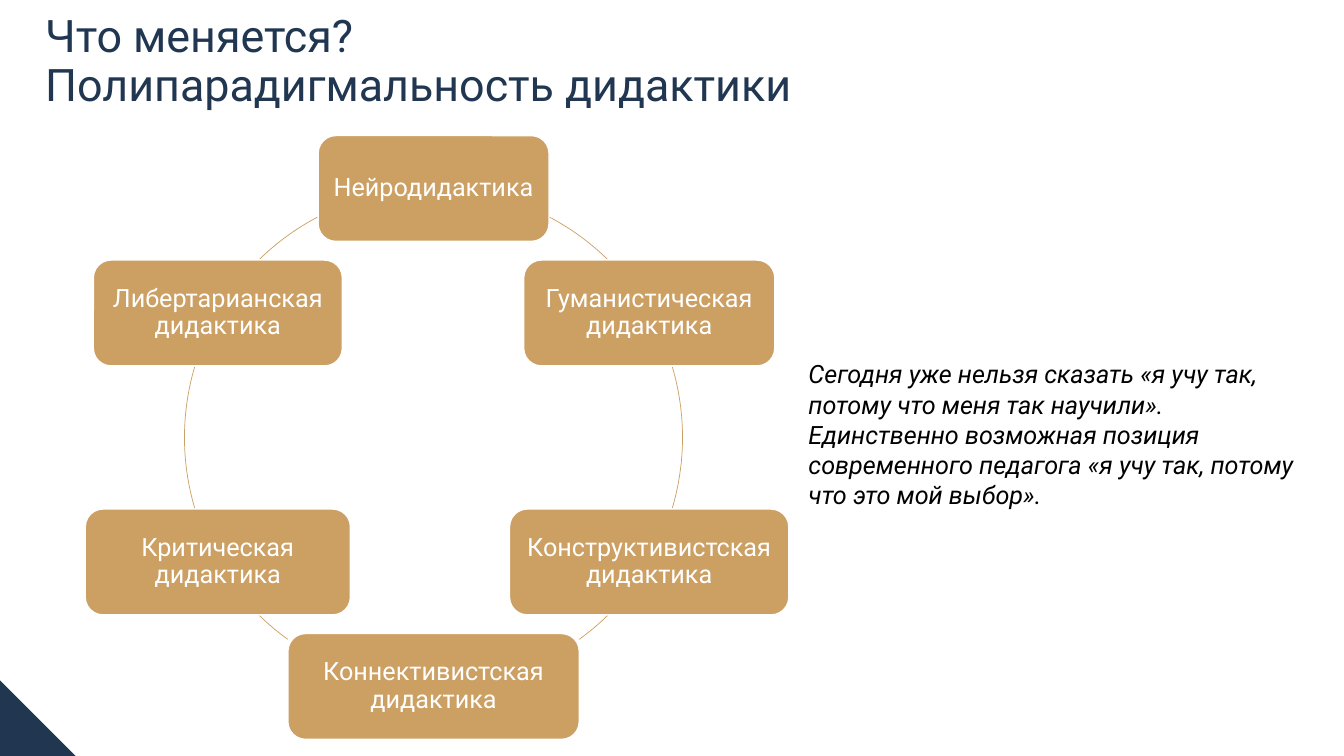
import math
from dataclasses import dataclass

import pptx
import pptx.dml.color
import pptx.enum.shapes
import pptx.enum.text
import pptx.util
from pptx.util import Inches

NAVY = pptx.dml.color.RGBColor(0x20, 0x36, 0x51)
GOLD = pptx.dml.color.RGBColor(0xCC, 0x9F, 0x62)
WHITE = pptx.dml.color.RGBColor(0xFF, 0xFF, 0xFF)
BLACK = pptx.dml.color.RGBColor(0x00, 0x00, 0x00)

FONT = "Roboto"
SHAPE = pptx.enum.shapes.MSO_SHAPE
ALIGN = pptx.enum.text.PP_ALIGN
ANCHOR = pptx.enum.text.MSO_ANCHOR

# Ring geometry: centre and radius in inches
MID_X, MID_Y, RADIUS = 4.3, 4.34, 2.47
HEIGHT = 1.05


@dataclass
class Node:
    label: str
    width: float


@dataclass
class Arc:
    start: float  # degrees clockwise from the right
    end: float


# Clockwise from the top
NODES = [
    Node("Нейродидактика", 2.29),
    Node("Гуманистическая дидактика", 2.49),
    Node("Конструктивистская дидактика", 2.77),
    Node("Коннективистская дидактика", 2.89),
    Node("Критическая дидактика", 2.63),
    Node("Либертарианская дидактика", 2.47),
]
# Right half; the left half mirrors it
ARCS = [Arc(-62.3, -45.7), Arc(-16.4, 16.4), Arc(45.5, 54.2)]

QUOTE = [
    "Сегодня уже нельзя сказать «я учу так, потому что меня так научили».",
    "Единственно возможная позиция современного педагога "
    "«я учу так, потому что это мой выбор».",
]


def write(shape, lines: list[str], *, size: float = 18, color=BLACK,
          italic: bool = False, align=ALIGN.LEFT, anchor=ANCHOR.TOP,
          pitch: float = 1.0, inset: tuple[float, float] = (0.1, 0.05)) -> None:
    frame = shape.text_frame
    frame.word_wrap = True
    frame.vertical_anchor = anchor
    frame.margin_left = frame.margin_right = Inches(inset[0])
    frame.margin_top = frame.margin_bottom = Inches(inset[1])
    for i, line in enumerate(lines):
        para = frame.paragraphs[0] if i == 0 else frame.add_paragraph()
        para.text = line
        para.alignment = align
        para.line_spacing = pitch
        para.font.name = FONT
        para.font.size = pptx.util.Pt(size)
        para.font.italic = italic
        para.font.color.rgb = color


def box(slide, x: float, y: float, w: float, h: float):
    return slide.shapes.add_textbox(Inches(x), Inches(y), Inches(w), Inches(h))


def form(slide, kind, x: float, y: float, w: float, h: float,
         fill=None, line=None, weight: float = 1):
    shape = slide.shapes.add_shape(
        kind, Inches(x), Inches(y), Inches(w), Inches(h))
    shape.shadow.inherit = False
    if fill is None:
        shape.fill.background()
    else:
        shape.fill.solid()
        shape.fill.fore_color.rgb = fill
    if line is None:
        shape.line.fill.background()
    else:
        shape.line.color.rgb = line
        shape.line.width = pptx.util.Pt(weight)
    return shape


def draw_arc(slide, arc: Arc) -> None:
    shape = form(slide, SHAPE.ARC, MID_X - RADIUS, MID_Y - RADIUS,
                 2 * RADIUS, 2 * RADIUS, line=GOLD, weight=0.5)
    # One degree is 60000 units; adjustments count in 100000
    shape.adjustments[0] = arc.start % 360 * 0.6
    shape.adjustments[1] = arc.end % 360 * 0.6


def draw_node(slide, node: Node, angle: float) -> None:
    x = MID_X + RADIUS * math.cos(math.radians(angle))
    y = MID_Y + RADIUS * math.sin(math.radians(angle))
    shape = form(slide, SHAPE.ROUNDED_RECTANGLE, x - node.width / 2,
                 y - HEIGHT / 2, node.width, HEIGHT, fill=GOLD, line=WHITE)
    # The rounded corners already hold the text in a little
    write(shape, [node.label], color=WHITE, align=ALIGN.CENTER,
          anchor=ANCHOR.MIDDLE, pitch=0.9, inset=(0.06, 0.06))


def main() -> None:
    deck = pptx.Presentation()
    deck.slide_width, deck.slide_height = Inches(13.33), Inches(7.5)
    slide = deck.slides.add_slide(deck.slide_layouts[6])

    # Corner and title
    form(slide, SHAPE.RIGHT_TRIANGLE, -0.05, 6.7, 0.8, 0.8, fill=NAVY)
    write(box(slide, 0.35, 0.14, 10.58, 0.96),
          ["Что меняется?\vПолипарадигмальность дидактики"],
          size=32, color=NAVY, anchor=ANCHOR.MIDDLE, pitch=0.9)

    # Ring of approaches
    for arc in ARCS:
        draw_arc(slide, arc)
        draw_arc(slide, Arc(180 - arc.end, 180 - arc.start))
    for i, node in enumerate(NODES):
        draw_node(slide, node, i * 360 / len(NODES) - 90)

    # Quote
    write(box(slide, 7.92, 3.51, 5.41, 1.62), QUOTE, italic=True)

    deck.save("out.pptx")


if __name__ == "__main__":
    main()
